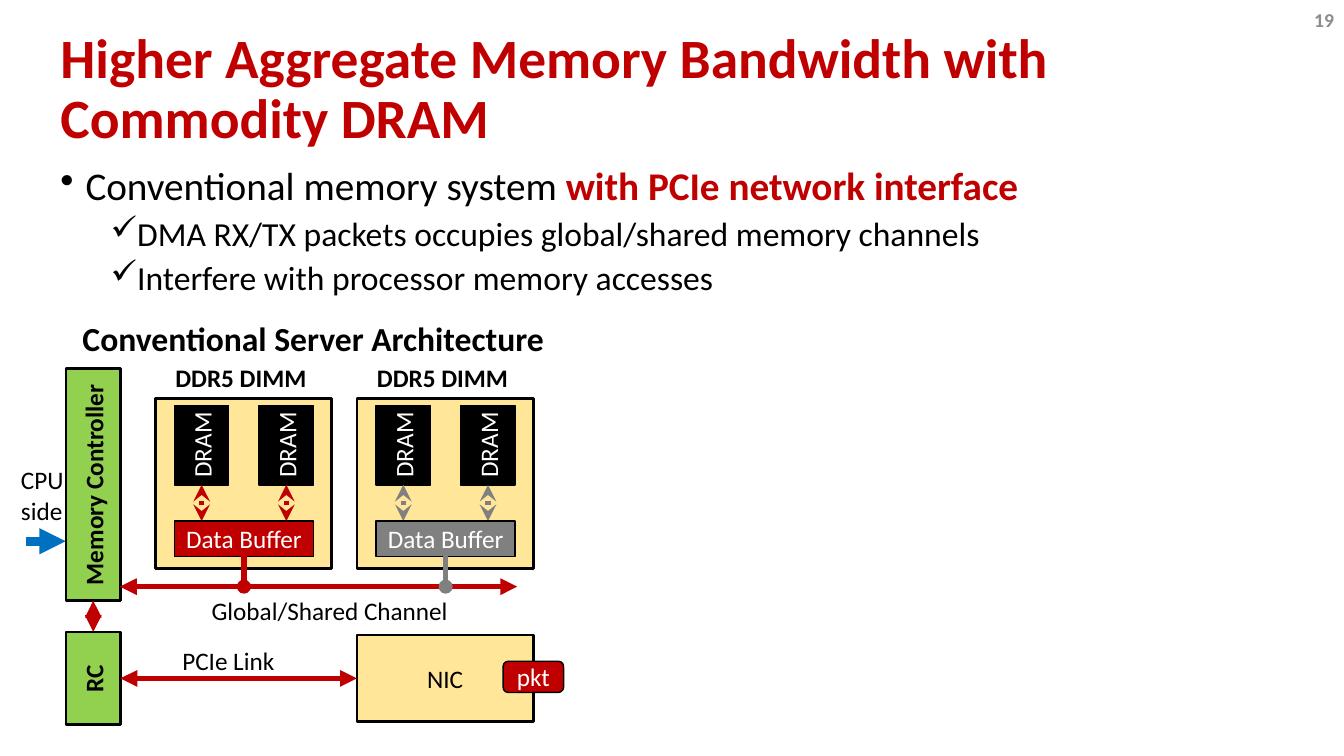
from dataclasses import dataclass

from lxml import etree
from pptx import Presentation
from pptx.dml.color import RGBColor
from pptx.enum.shapes import MSO_CONNECTOR, MSO_SHAPE
from pptx.enum.text import MSO_ANCHOR, MSO_AUTO_SIZE, PP_ALIGN
from pptx.oxml.ns import qn
from pptx.util import Emu, Inches, Pt

RECT, ROUNDED, OVAL = MSO_SHAPE.RECTANGLE, MSO_SHAPE.ROUNDED_RECTANGLE, MSO_SHAPE.OVAL
STRAIGHT = MSO_CONNECTOR.STRAIGHT
LEFT, CENTER, RIGHT = PP_ALIGN.LEFT, PP_ALIGN.CENTER, PP_ALIGN.RIGHT
MIDDLE = MSO_ANCHOR.MIDDLE
FIT_SHAPE, NO_FIT = MSO_AUTO_SIZE.SHAPE_TO_FIT_TEXT, MSO_AUTO_SIZE.NONE
SIDE_TOP, SIDE_LEFT, SIDE_BOTTOM, SIDE_RIGHT = range(4)

FONT = "Calibri"
COLORS = {
    "red": "C00000", "black": "000000", "white": "FFFFFF", "gray": "808080",
    "page": "8C8C8C", "green": "92D050", "sand": "FFE699", "blue": "0070C0",
}
CELL = Inches(0.1)  # the slide is a grid of 133.3 columns by 75 rows
COLUMNS, ROWS = 133.3, 75


@dataclass(frozen=True)
class Block:
    column: float
    row: float
    columns: float
    rows: float
    fill: str
    text: str = ""
    color: str = "black"
    bold: bool = False
    outline: float = 2
    upright: bool = False
    kind: MSO_SHAPE = RECT


@dataclass(frozen=True)
class Label:
    column: float
    row: float
    columns: float
    rows: float
    text: str
    size: float = 18
    bold: bool = False


@dataclass(frozen=True)
class Dimm:
    column: float
    accent: str


@dataclass(frozen=True)
class Bullet:
    runs: tuple
    mark: str
    size: float
    indent: float
    space_before: float
    level: int = 0


MEMORY_CONTROLLER = Block(6.55, 36.6, 5.4, 23, "green", "Memory Controller", bold=True, upright=True)
ROOT_COMPLEX = Block(6.55, 62.7, 5.4, 9.2, "green", "RC", bold=True, upright=True)
NIC = Block(35.4, 63, 17.5, 8.6, "sand", "NIC")
PACKET = Block(49.9, 65.6, 6, 3.1, "red", "pkt", "white", outline=1, kind=ROUNDED)
DIMMS = (Dimm(15.4, "red"), Dimm(35.4, "gray"))
DRAM_OFFSETS = (1.9, 10.3)
CHANNEL_ROW, BUFFER_ROW = 58.2, 51.7
LABELS = (
    Label(7.2, 31, 48.3, 5, "Conventional Server Architecture", 24, True),
    Label(20, 58.6, 25.7, 4, "Global/Shared Channel"),
    Label(17.1, 63.5, 11.3, 4, "PCIe Link"),
    Label(1.1, 45.6, 6.3, 7.1, "CPU\nside"),
)
BULLETS = (
    Bullet((("Conventional memory system ", "black", False),
            ("with PCIe network interface", "red", True)), "•", 28, 2.5, 10),
    Bullet((("DMA RX/TX packets occupies global/shared memory channels", "black", False),),
           "✓", 24, 7.5, 6, 1),
    Bullet((("Interfere with processor memory accesses", "black", False),), "✓", 24, 7.5, 6, 1),
)


def cells(count: float) -> Emu:
    return Emu(round(count * CELL))


def rgb(name: str) -> RGBColor:
    return RGBColor.from_string(COLORS[name])


def add_run(paragraph, text: str, *, size: float = 18, color: str = "black",
            bold: bool = False, align: PP_ALIGN = LEFT) -> None:
    paragraph.alignment = align
    run = paragraph.add_run()
    run.text = text
    run.font.name, run.font.size, run.font.bold = FONT, Pt(size), bold
    run.font.color.rgb = rgb(color)


def draw_block(slide, block: Block):
    shape = slide.shapes.add_shape(
        block.kind, *map(cells, (block.column, block.row, block.columns, block.rows)))
    shape.shadow.inherit = False
    shape.fill.solid()
    shape.fill.fore_color.rgb = rgb(block.fill)
    if block.outline:
        shape.line.color.rgb = rgb("black")
        shape.line.width = Pt(block.outline)
    else:
        shape.line.fill.background()
    if block.text:
        frame = shape.text_frame
        frame.margin_left = frame.margin_right = frame.margin_top = frame.margin_bottom = 0
        frame.vertical_anchor = MIDDLE
        if block.upright:
            frame._txBody.bodyPr.set("vert", "vert270")
        add_run(frame.paragraphs[0], block.text, color=block.color, bold=block.bold, align=CENTER)
    return shape


def draw_label(slide, label: Label) -> None:
    frame = slide.shapes.add_textbox(
        *map(cells, (label.column, label.row, label.columns, label.rows))).text_frame
    frame.word_wrap = False
    frame.auto_size = FIT_SHAPE
    for index, line in enumerate(label.text.split("\n")):
        paragraph = frame.add_paragraph() if index else frame.paragraphs[0]
        add_run(paragraph, line, size=label.size, bold=label.bold)


def draw_link(slide, start: tuple, end: tuple, color: str, *, width: float = 4,
              head: str = "none", tail: str = "none"):
    link = slide.shapes.add_connector(STRAIGHT, *map(cells, (*start, *end)))
    link.line.color.rgb = rgb(color)
    link.line.width = Pt(width)
    outline = link.line._get_or_add_ln()
    etree.SubElement(outline, qn("a:headEnd"), type=head)
    etree.SubElement(outline, qn("a:tailEnd"), type=tail)
    etree.SubElement(link._element.spPr, qn("a:effectLst"))
    return link


def draw_dimm(slide, dimm: Dimm) -> None:
    draw_block(slide, Block(dimm.column, 39.5, 17.5, 16.9, "sand"))
    draw_label(slide, Label(dimm.column + 1, 35.5, 15.2, 4, "DDR5 DIMM", bold=True))
    for offset in DRAM_OFFSETS:
        column = dimm.column + offset
        dram = draw_block(slide, Block(column, 40.2, 5.4, 7.9, "black", "DRAM", "white",
                                       outline=1, upright=True))
        middle = column + 2.7
        link = draw_link(slide, (middle, 48.1), (middle, BUFFER_ROW), dimm.accent,
                         head="stealth", tail="stealth")
        link.begin_connect(dram, SIDE_BOTTOM)
    buffer = draw_block(slide, Block(dimm.column + 1.9, BUFFER_ROW, 13.8, 3.5, dimm.accent,
                                     "Data Buffer", "white", outline=1))
    middle = dimm.column + 8.8
    stem = draw_link(slide, (middle, 55.2), (middle, CHANNEL_ROW), dimm.accent)
    stem.begin_connect(buffer, SIDE_BOTTOM)
    draw_block(slide, Block(middle - 0.7, CHANNEL_ROW - 0.7, 1.4, 1.4, dimm.accent,
                            outline=0, kind=OVAL))


def draw_heading(slide) -> None:
    title = slide.shapes.title
    title.left, title.top, title.width, title.height = map(cells, (5, 4, 125, 10))
    frame = title.text_frame
    frame.word_wrap, frame.auto_size, frame.vertical_anchor = True, NO_FIT, MIDDLE
    frame.paragraphs[0].line_spacing = 0.9
    add_run(frame.paragraphs[0], "Higher Aggregate Memory Bandwidth with Commodity DRAM",
            size=39.6, color="red", bold=True)
    number = slide.shapes.add_textbox(*map(cells, (COLUMNS - 30, 0, 30, 4))).text_frame
    number.word_wrap, number.vertical_anchor = True, MIDDLE
    add_run(number.paragraphs[0], "19", size=14, color="page", bold=True, align=RIGHT)


def draw_bullets(slide) -> None:
    frame = slide.shapes.add_textbox(*map(cells, (5, 16, 125, 55))).text_frame
    frame.word_wrap = True
    for index, bullet in enumerate(BULLETS):
        paragraph = frame.add_paragraph() if index else frame.paragraphs[0]
        paragraph.level = bullet.level
        paragraph.line_spacing = 0.9
        paragraph.space_before = Pt(bullet.space_before)
        for text, color, bold in bullet.runs:
            add_run(paragraph, text, size=bullet.size, color=color, bold=bold)
        properties = paragraph._p.get_or_add_pPr()
        properties.set("marL", str(cells(bullet.indent)))
        properties.set("indent", str(cells(-2.5)))
        etree.SubElement(properties, qn("a:buChar"), char=bullet.mark)


def draw_architecture(slide) -> None:
    controller, root, nic = (
        draw_block(slide, block) for block in (MEMORY_CONTROLLER, ROOT_COMPLEX, NIC))
    draw_link(slide, (51.3, CHANNEL_ROW), (11.9, CHANNEL_ROW), "red",
              head="triangle", tail="triangle")
    for dimm in DIMMS:
        draw_dimm(slide, dimm)
    for start, start_side, end, end_side in (
            (nic, SIDE_LEFT, root, SIDE_RIGHT), (root, SIDE_TOP, controller, SIDE_BOTTOM)):
        link = draw_link(slide, (0, 0), (0, 0), "red", head="triangle", tail="triangle")
        link.begin_connect(start, start_side)
        link.end_connect(end, end_side)
    draw_block(slide, PACKET)
    draw_link(slide, (2.6, 53.7), (6.5, 53.7), "blue", width=6.25, tail="triangle")
    for label in LABELS:
        draw_label(slide, label)


def main() -> None:
    deck = Presentation()
    deck.slide_width, deck.slide_height = cells(COLUMNS), cells(ROWS)
    slide = deck.slides.add_slide(deck.slide_layouts[5])
    draw_heading(slide)
    draw_bullets(slide)
    draw_architecture(slide)
    deck.save("out.pptx")


if __name__ == "__main__":
    main()
